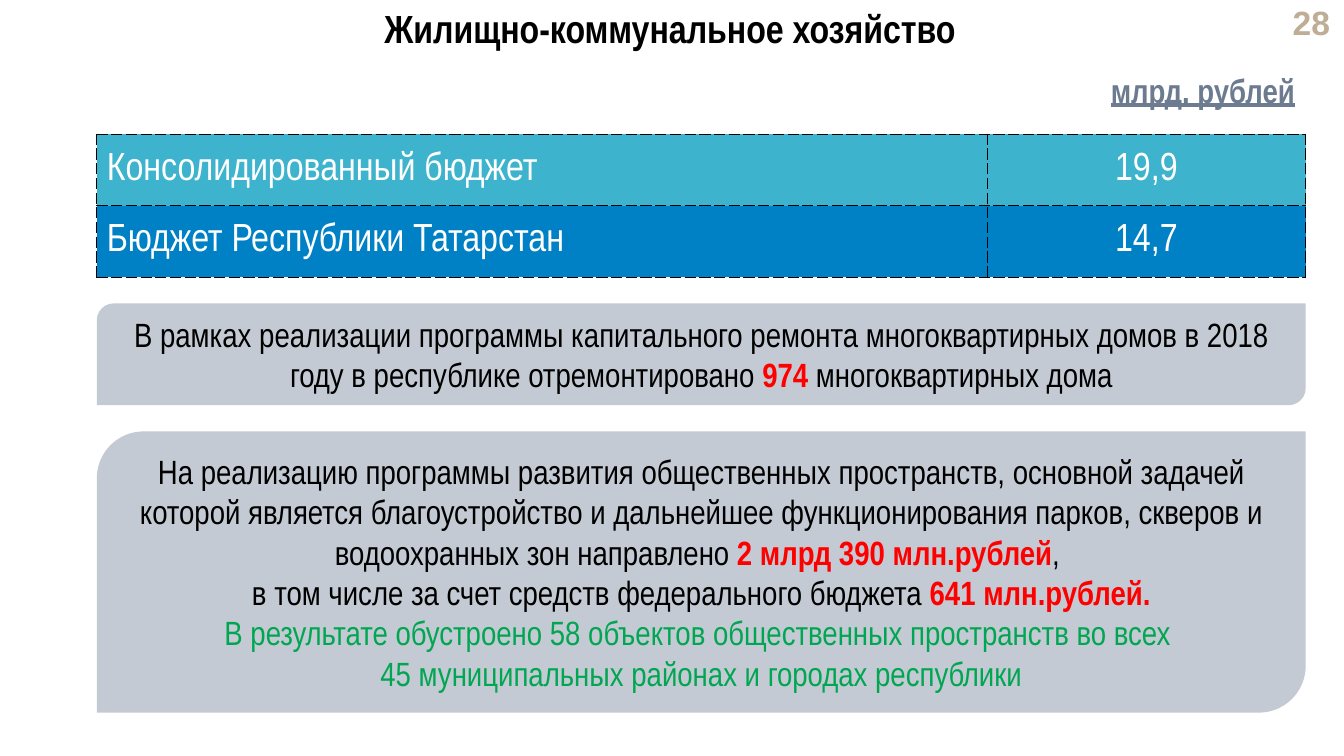
from lxml import etree
from pptx import Presentation
from pptx.dml.color import RGBColor
from pptx.enum.shapes import MSO_SHAPE
from pptx.enum.text import MSO_ANCHOR as ANCHOR, PP_ALIGN as ALIGN
from pptx.oxml.ns import qn
from pptx.util import Inches, Pt

COLORS = {
    "black": "000000", "white": "FFFFFF", "red": "FF0000", "green": "00A651",
    "sand": "BFAE96", "slate": "6C7B90", "panel": "C4CAD3",
    "teal": "3DB3CD", "blue": "0081C5",
}
LEFT, WIDTH = 0.96, 11.99


def color(name):
    return RGBColor.from_string(COLORS[name])


def add_runs(p, runs, size=24, font="Arial Narrow", align=ALIGN.CENTER):
    """Add (text, color, bold) runs; a newline becomes a line break."""
    p.alignment = align
    for text, name, bold in runs:
        for i, line in enumerate(text.split("\n")):
            if i:
                p.add_line_break()
            r = p.add_run()
            r.text = line
            r.font.name = font
            r.font.size = Pt(size)
            r.font.bold = bold
            r.font.color.rgb = color(name)


prs = Presentation()
prs.slide_width, prs.slide_height = Inches(13.33), Inches(7.5)
s = prs.slides.add_slide(prs.slide_layouts[6])

# Page number, title and unit label
labels = [
    ((12.44, 0.05, 0.85, 0.34), "28", "sand", 24, "Arial", ALIGN.RIGHT, ANCHOR.MIDDLE),
    ((0.75, 0.05, 11.79, 0.63), "Жилищно-коммунальное хозяйство", "black", 28,
     "Arial Narrow", ALIGN.CENTER, ANCHOR.TOP),
    ((10.74, 0.64, 2.2, 0.32), "млрд. рублей", "slate", 24,
     "Arial Narrow", ALIGN.RIGHT, ANCHOR.TOP),
]
for box, text, name, size, font, align, anchor in labels:
    tf = s.shapes.add_textbox(*map(Inches, box)).text_frame
    tf.word_wrap = True
    tf.vertical_anchor = anchor
    p = tf.paragraphs[0]
    add_runs(p, [(text, name, True)], size, font, align)
    if name == "black":
        p.line_spacing = 0.9
    if name == "slate":
        p.runs[0].font.underline = True

# Budget table
budgets = [
    ("Консолидированный бюджет", "19,9", "teal"),
    ("Бюджет Республики Татарстан", "14,7", "blue"),
]
table = s.shapes.add_table(2, 2, Inches(LEFT), Inches(1.33), Inches(WIDTH), Inches(1.42)).table
table.first_row = table.horz_banding = False
table.columns[0].width, table.columns[1].width = Inches(8.83), Inches(3.16)
for row, (budget, amount, fill) in enumerate(budgets):
    for col, (text, align) in enumerate([(budget, ALIGN.LEFT), (amount, ALIGN.CENTER)]):
        cell = table.cell(row, col)
        cell.vertical_anchor = ANCHOR.MIDDLE
        add_runs(cell.text_frame.paragraphs[0], [(text, "white", False)], 28, align=align)
        tcPr = cell._tc.get_or_add_tcPr()
        for side in ("lnL", "lnR", "lnT", "lnB"):
            ln = etree.SubElement(tcPr, qn(f"a:{side}"), w=str(Pt(0.5)))
            line_fill = etree.SubElement(ln, qn("a:solidFill"))
            etree.SubElement(line_fill, qn("a:srgbClr"), val=COLORS["black"])
            etree.SubElement(ln, qn("a:prstDash"), val="sysDash")
        cell.fill.solid()
        cell.fill.fore_color.rgb = color(fill)

# Programme panels: top, height, paragraphs
panels = [
    (3.01, 1.01, [[
        ("В рамках реализации программы капитального ремонта многоквартирных домов "
         "в 2018 году в республике отремонтировано ", "black", False),
        ("974 ", "red", True),
        ("многоквартирных дома", "black", False),
    ]]),
    (4.28, 2.79, [[
        ("На реализацию программы развития общественных пространств, основной задачей "
         "которой является благоустройство и дальнейшее функционирования парков, "
         "скверов и водоохранных зон направлено ", "black", False),
        ("2 млрд 390 млн.рублей", "red", True),
        (", \nв том числе за счет средств федерального бюджета ", "black", False),
        ("641 млн.рублей.", "red", True),
    ], [
        ("В результате обустроено 58 объектов общественных пространств во всех \n"
         "45 муниципальных районах и городах республики", "green", False),
    ]]),
]
for top, height, paragraphs in panels:
    sp = s.shapes.add_shape(MSO_SHAPE.ROUND_2_DIAG_RECTANGLE, Inches(LEFT), Inches(top),
                            Inches(WIDTH), Inches(height))
    sp.shadow.inherit = False
    sp.fill.solid()
    sp.fill.fore_color.rgb = color("panel")
    sp.line.fill.background()
    tf = sp.text_frame
    tf.word_wrap = True
    tf.vertical_anchor = ANCHOR.MIDDLE
    for i, runs in enumerate(paragraphs):
        add_runs(tf.add_paragraph() if i else tf.paragraphs[0], runs)

prs.save("out.pptx")
